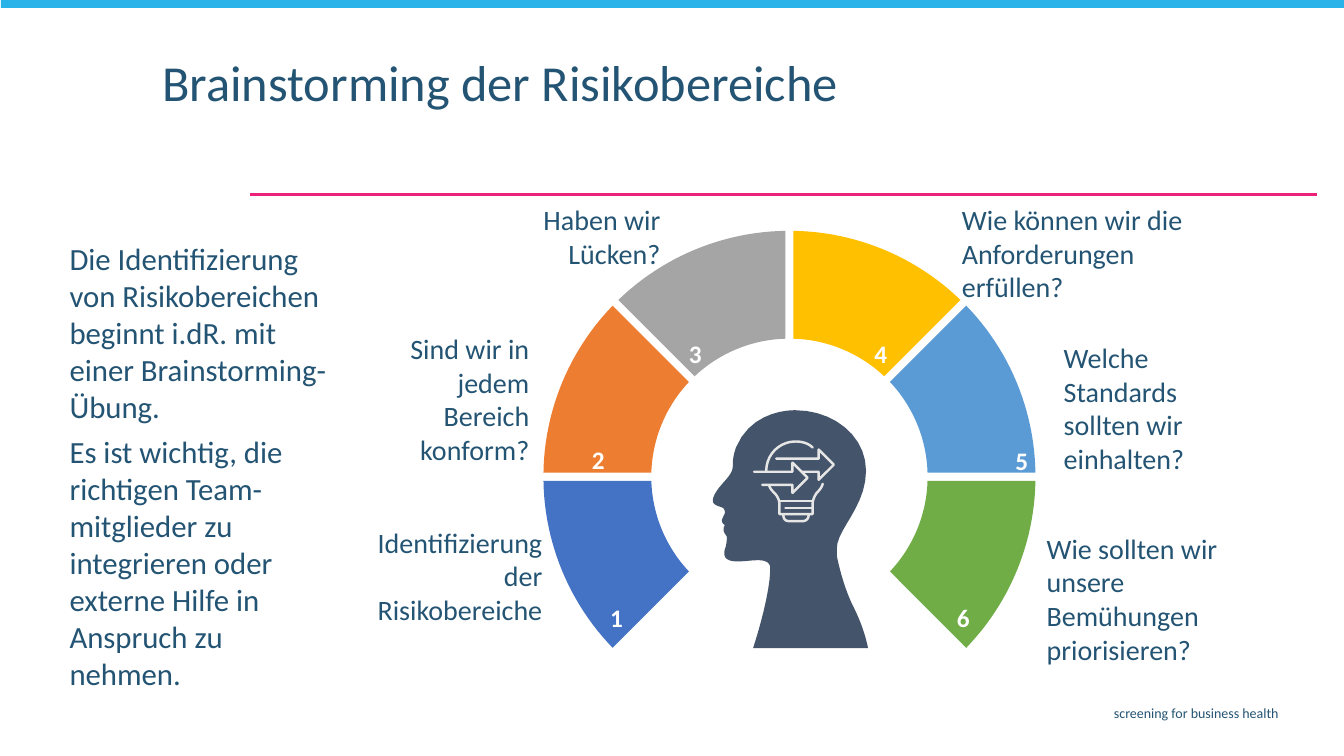
from math import asin, cos, radians, sin

from lxml import etree
from pptx import Presentation
from pptx.dml.color import RGBColor
from pptx.enum.shapes import MSO_CONNECTOR, MSO_SHAPE
from pptx.enum.text import MSO_ANCHOR, MSO_AUTO_SIZE, PP_ALIGN
from pptx.oxml.ns import qn
from pptx.util import Inches, Pt

STRAIGHT = MSO_CONNECTOR.STRAIGHT
RECTANGLE = MSO_SHAPE.RECTANGLE
TOP, MIDDLE = MSO_ANCHOR.TOP, MSO_ANCHOR.MIDDLE
FIXED, GROW = MSO_AUTO_SIZE.NONE, MSO_AUTO_SIZE.SHAPE_TO_FIT_TEXT
LEFT, CENTER, RIGHT = PP_ALIGN.LEFT, PP_ALIGN.CENTER, PP_ALIGN.RIGHT

COLORS = {
    "text": "245473", "white": "FFFFFF", "banner": "29B3E8", "rule": "EC2179",
    "head": "44546A", "bulb": "E7E6E6", "blue": "4472C4", "orange": "ED7D31",
    "gray": "A5A5A5", "gold": "FFC000", "sky": "5B9BD5", "green": "70AD47",
}


def margins(across, down):
    return {"margin_left": Inches(across), "margin_right": Inches(across),
            "margin_top": Inches(down), "margin_bottom": Inches(down)}


FRAMES = {
    "title": {"word_wrap": True, "auto_size": FIXED, "vertical_anchor": TOP},
    "body": {"word_wrap": True, "auto_size": GROW, **margins(0.09, 0.04)},
    "label": {"word_wrap": True, "auto_size": GROW, **margins(0.04, 0.02)},
    "number": {"word_wrap": False, "auto_size": GROW, "vertical_anchor": MIDDLE},
    "footer": {"word_wrap": True, "auto_size": FIXED},
}
FONTS = {
    "title": {"size": Pt(36), "bold": False},
    "body": {"size": Pt(22)},
    "label": {"size": Pt(20)},
    "number": {"size": Pt(18), "bold": True},
    "footer": {"size": Pt(10)},
}

RING_CENTER = (7.83, 4.73)
OUTER, INNER, HALF_GAP, STEP = 2.44, 1.37, 0.04, 45

STATIONS = [
    ("1", "blue", (5.95, 5.93), "Identifizierung der Risikobereiche",
     (3.56, 5.19, 1.86, 1.05), RIGHT),
    ("2", "orange", (5.77, 4.36), "Sind wir in jedem Bereich konform?",
     (3.72, 3.27, 1.57, 1.38), RIGHT),
    ("3", "gray", (6.73, 3.31), "Haben wir Lücken?",
     (4.9, 1.99, 1.69, 0.71), RIGHT),
    ("4", "gold", (8.57, 3.31), "Wie können wir die Anforderungen erfüllen?",
     (9.5, 1.99, 2.45, 1.05), LEFT),
    ("5", "sky", (9.97, 4.37), "Welche Standards sollten wir einhalten?",
     (10.51, 3.36, 1.44, 1.38), LEFT),
    ("6", "green", (9.39, 5.93), "Wie sollten wir unsere Bemühungen priorisieren?",
     (10.34, 5.25, 1.78, 1.38), LEFT),
]

HEAD = [
    (8.3, 5.51), (8.3, 5.49, 8.3, 5.47, 8.3, 5.45),
    (8.29, 5.26, 8.59, 5.03, 8.59, 4.67), (8.59, 4.32, 8.26, 4.07, 7.89, 4.07),
    (7.89, 4.07, 7.46, 4.05, 7.3, 4.44), (7.23, 4.64, 7.32, 4.62, 7.2, 4.76),
    (7.07, 4.9, 7.04, 4.98, 7.1, 5.01), (7.15, 5.04, 7.19, 5.02, 7.19, 5.09),
    (7.18, 5.13, 7.13, 5.17, 7.19, 5.21), (7.15, 5.27, 7.21, 5.31, 7.21, 5.33),
    (7.21, 5.33, 7.21, 5.37, 7.2, 5.42), (7.18, 5.47, 7.15, 5.57, 7.31, 5.57),
    (7.46, 5.57, 7.61, 5.52, 7.64, 5.62), (7.64, 5.63, 7.64, 5.65, 7.64, 5.66),
    (7.63, 5.95, 7.47, 6.43, 7.47, 6.43), (8.61, 6.43),
    (8.61, 6.43, 8.58, 6.25, 8.47, 6.03), (8.36, 5.82, 8.3, 5.52, 8.3, 5.51),
]
BULB = [
    [(7.6, 4.67), (7.6, 4.51, 7.73, 4.38, 7.89, 4.38),
     (7.96, 4.38, 8.02, 4.4, 8.06, 4.44)],
    [(7.7, 4.55), (8.12, 4.55), (8.12, 4.46), (8.27, 4.61), (8.12, 4.76),
     (8.12, 4.68), (7.96, 4.68)],
    [(7.48, 4.68), (7.86, 4.68), (7.86, 4.59), (8.01, 4.74), (7.86, 4.89),
     (7.86, 4.81), (7.56, 4.81)],
    [(7.63, 4.82), (7.64, 4.85, 7.66, 4.87, 7.68, 4.89),
     (7.71, 4.92, 7.73, 4.96, 7.73, 5), (7.73, 5.1), (8.06, 5.1), (8.06, 5),
     (8.06, 4.96, 8.08, 4.92, 8.1, 4.89), (8.12, 4.87, 8.15, 4.84, 8.16, 4.8)],
    [(7.73, 4.97), (8.06, 4.97)],
    [(7.79, 5.04), (8.06, 5.04)],
    [(7.77, 5.11), (7.77, 5.15, 7.79, 5.17, 7.83, 5.17), (7.96, 5.17),
     (7.99, 5.17, 8.02, 5.15, 8.02, 5.11)],
]


def apply(target, values):
    for name, value in values.items():
        setattr(target, name, value)


def ring_arc(radius, start, end, pieces=24):
    inset = asin(HALF_GAP / radius)
    first, last = radians(start) + inset, radians(end) - inset
    angles = [first + (last - first) * i / pieces for i in range(pieces + 1)]
    return [(RING_CENTER[0] + radius * cos(a), RING_CENTER[1] - radius * sin(a))
            for a in angles]


def flatten(steps, pieces=10):
    points = [steps[0]]
    for step in steps[1:]:
        if len(step) == 2:
            points.append(step)
            continue
        knots = [points[-1], step[:2], step[2:4], step[4:]]
        for i in range(1, pieces + 1):
            t = i / pieces
            weights = ((1 - t) ** 3, 3 * t * (1 - t) ** 2, 3 * t * t * (1 - t), t ** 3)
            points.append(tuple(sum(w * knot[axis] for w, knot in zip(weights, knots))
                                for axis in (0, 1)))
    return points


class SlideBuilder:
    def __init__(self, slide):
        self.slide = slide
        self.shapes = slide.shapes

    def color(self, name):
        return RGBColor.from_string(COLORS[name])

    def paint(self, shape, fill):
        shape.shadow.inherit = False
        shape.fill.solid()
        shape.fill.fore_color.rgb = self.color(fill)
        shape.line.fill.background()

    def fill_frame(self, frame, role, paragraphs, align, color="text", **spacing):
        apply(frame, FRAMES[role])
        for i, words in enumerate(paragraphs):
            paragraph = frame.add_paragraph() if i else frame.paragraphs[0]
            paragraph.text = words
            apply(paragraph, {"alignment": align, **spacing})
            if i:
                paragraph.space_before = Pt(6)
            apply(paragraph.font, {"name": "Calibri", **FONTS[role]})
            paragraph.font.color.rgb = self.color(color)

    def title(self, box, words):
        heading = self.shapes.title
        apply(heading, dict(zip(("left", "top", "width", "height"), map(Inches, box))))
        self.fill_frame(heading.text_frame, "title", [words], LEFT,
                        line_spacing=0.9, space_before=Pt(0))

    def text(self, box, role, paragraphs, align=LEFT, color="text"):
        frame = self.shapes.add_textbox(*map(Inches, box)).text_frame
        self.fill_frame(frame, role, paragraphs, align, color)

    def bar(self, box, fill):
        self.paint(self.shapes.add_shape(RECTANGLE, *map(Inches, box)), fill)

    def rule(self, start, end, color):
        rule = self.shapes.add_connector(STRAIGHT, *map(Inches, start + end))
        rule.line.color.rgb = self.color(color)
        rule.line.width = Pt(1.5)
        etree.SubElement(rule.element.spPr, qn("a:effectLst"))

    def outline(self, contours, close):
        contours = [[(Inches(x), Inches(y)) for x, y in points] for points in contours]
        builder = self.shapes.build_freeform(*contours[0][0])
        for i, points in enumerate(contours):
            if i:
                builder.move_to(*points[0])
            builder.add_line_segments(points[1:], close=close)
        return builder.convert_to_shape()

    def solid(self, points, fill):
        self.paint(self.outline([points], True), fill)

    def strokes(self, contours, color):
        drawing = self.outline(contours, False)
        drawing.shadow.inherit = False
        drawing.fill.background()
        drawing.line.color.rgb = self.color(color)
        drawing.line.width = Pt(1.75)
        drawing.element.spPr.find(qn("a:ln")).set("cap", "rnd")


def main():
    deck = Presentation()
    deck.slide_width, deck.slide_height = Inches(13.33), Inches(7.5)
    page = SlideBuilder(deck.slides.add_slide(deck.slide_layouts[5]))
    page.rule((13.06, 1.93), (2.48, 1.93), "rule")
    page.bar((0.01, -0.02, 13.34, 0.1), "banner")
    page.text((3.65, 6.94, 9.13, 0.29), "footer", ["screening for business health"], RIGHT)
    page.title((1.51, 0.53, 9.68, 0.76), "Brainstorming der Risikobereiche")
    page.text((0.6, 2.34, 2.76, 4.62), "body", [
        "Die Identifizierung von Risikobereichen beginnt i.dR. mit einer Brainstorming-Übung.",
        "Es ist wichtig, die richtigen Team-mitglieder zu integrieren oder externe Hilfe "
        "in Anspruch zu nehmen.",
    ])
    for i, (number, fill, corner, question, box, align) in enumerate(STATIONS):
        start = 180 - STEP * i
        outer, inner = (ring_arc(radius, start, start + STEP) for radius in (OUTER, INNER))
        page.solid(outer + inner[::-1], fill)
        page.text(corner + (0.33, 0.4), "number", [number], CENTER, "white")
        page.text(box, "label", [question], align)
    page.solid(flatten(HEAD), "head")
    page.strokes([flatten(steps) for steps in BULB], "bulb")
    deck.save("out.pptx")


if __name__ == "__main__":
    main()
